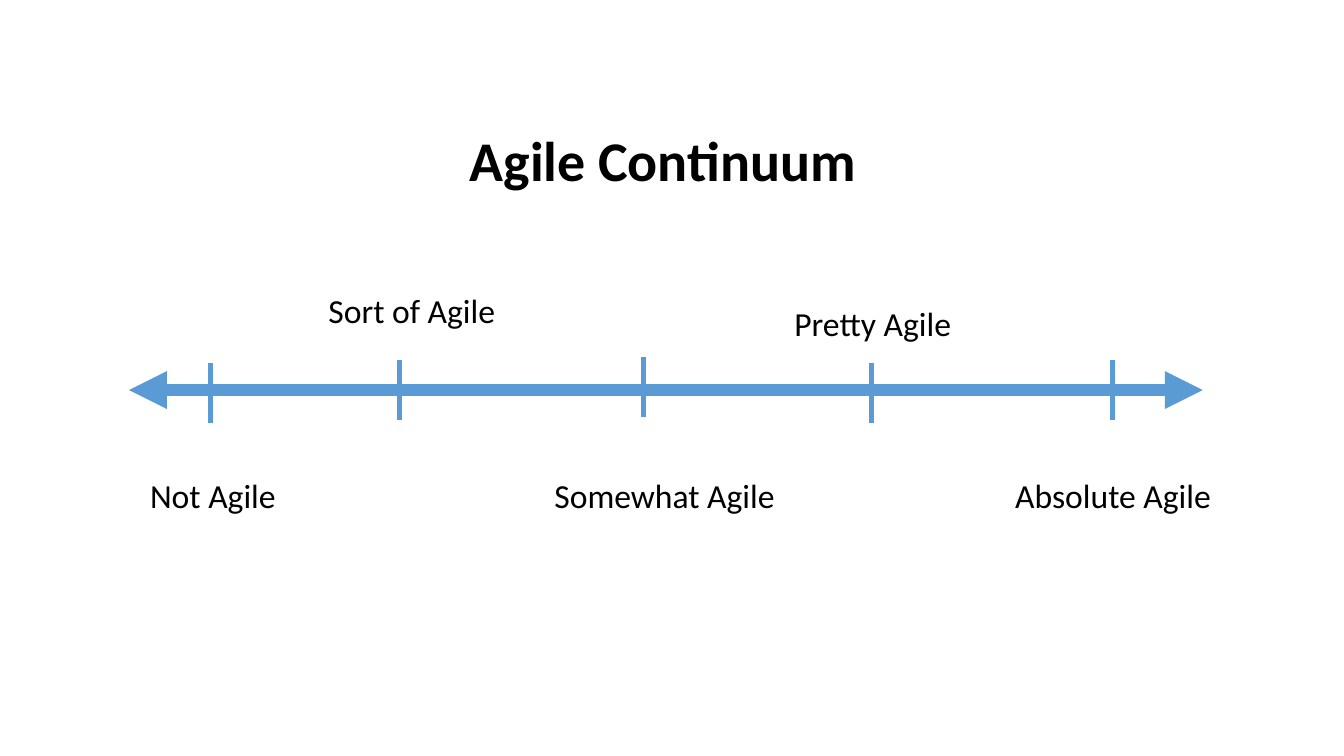
from lxml.etree import SubElement
from pptx import Presentation
from pptx.dml.color import RGBColor
from pptx.enum.shapes import MSO_CONNECTOR
from pptx.enum.text import MSO_AUTO_SIZE
from pptx.oxml.ns import qn
from pptx.util import Inches, Pt

BLUE = RGBColor(0x5B, 0x9B, 0xD5)
BLACK = RGBColor(0x00, 0x00, 0x00)

AXIS_Y = 3.87
TICK_HEIGHT = 0.6
LABEL_HEIGHT = 0.5
LOWER_LABEL_TOP = 4.66

deck = Presentation()
deck.slide_width = Inches(13.33)
deck.slide_height = Inches(7.5)
page = deck.slides.add_slide(deck.slide_layouts[6])


def add_line(left, top, right, bottom, weight, arrows=False):
    connector = page.shapes.add_connector(
        MSO_CONNECTOR.STRAIGHT,
        Inches(left), Inches(top), Inches(right), Inches(bottom))
    connector.line.color.rgb = BLUE
    connector.line.width = Pt(weight)
    if arrows:
        outline = connector.line._get_or_add_ln()
        for end in ("a:headEnd", "a:tailEnd"):
            SubElement(outline, qn(end), type="triangle")
    SubElement(connector._element.spPr, qn("a:effectLst"))


def add_label(text, left, top, width, height, size, bold=False):
    box = page.shapes.add_textbox(
        Inches(left), Inches(top), Inches(width), Inches(height))
    frame = box.text_frame
    frame.word_wrap = False
    frame.auto_size = MSO_AUTO_SIZE.SHAPE_TO_FIT_TEXT
    para = frame.paragraphs[0]
    para.text = text
    para.font.name = "Calibri"
    para.font.size = Pt(size)
    para.font.bold = bold
    para.font.color.rgb = BLACK


add_label("Agile Continuum", 4.56, 1.2, 4.08, 0.77, 40, bold=True)
add_line(1.28, AXIS_Y, 11.93, AXIS_Y, 9, arrows=True)

stages = [
    ("Not Agile", 1.39, LOWER_LABEL_TOP, 1.46, 2.09, 3.6),
    ("Sort of Agile", 3.16, 2.83, 1.87, 3.96, 3.57),
    ("Somewhat Agile", 5.4, LOWER_LABEL_TOP, 2.41, 6.38, 3.54),
    ("Pretty Agile", 7.78, 2.96, 1.78, 8.64, 3.6),
    ("Absolute Agile", 9.97, LOWER_LABEL_TOP, 2.16, 11.03, 3.57),
]
for text, left, top, width, tick_x, tick_top in stages:
    add_label(text, left, top, width, LABEL_HEIGHT, 24)
    add_line(tick_x, tick_top, tick_x, tick_top + TICK_HEIGHT, 3.5)

deck.save("out.pptx")
